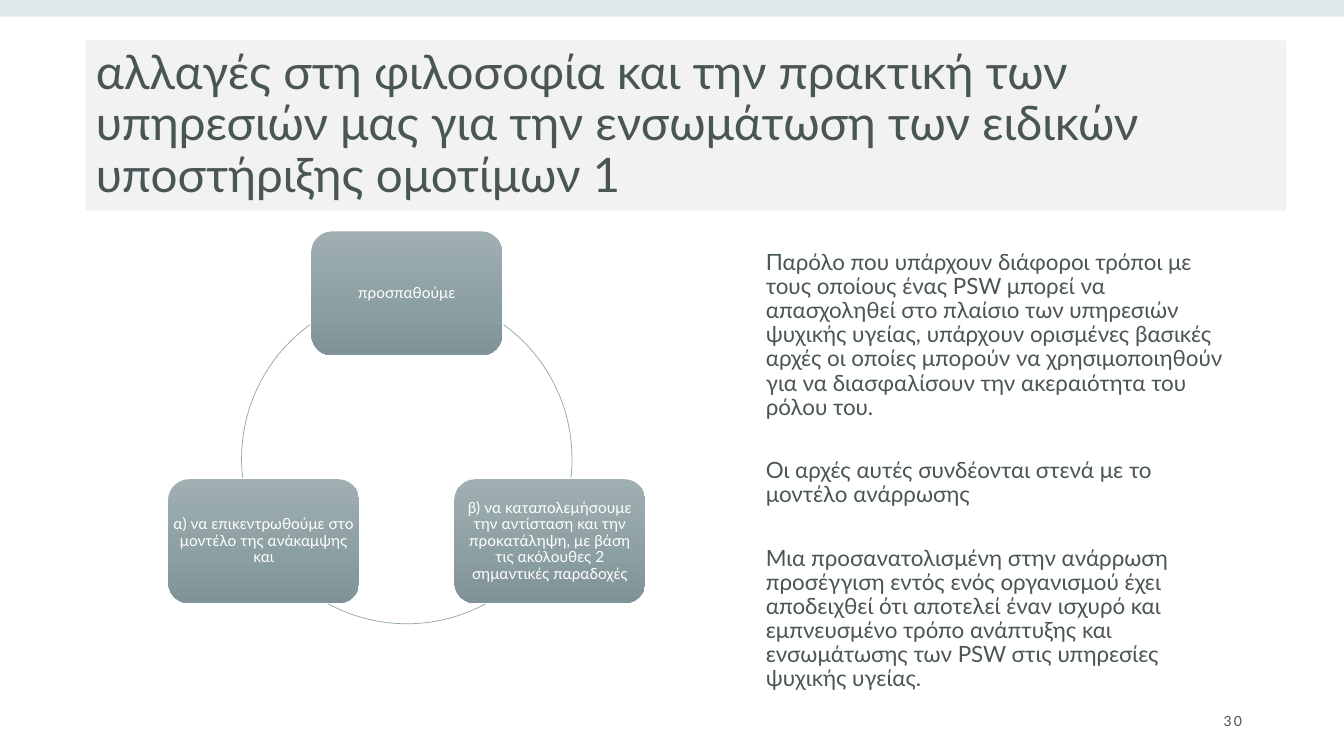
from dataclasses import dataclass
from math import cos, radians, sin

from lxml import etree
from pptx import Presentation
from pptx.dml.color import RGBColor
from pptx.enum.shapes import MSO_SHAPE
from pptx.enum.text import MSO_ANCHOR, MSO_AUTO_SIZE, PP_ALIGN
from pptx.oxml.ns import qn
from pptx.util import Pt

RECTANGLE, ROUNDED, ARC = MSO_SHAPE.RECTANGLE, MSO_SHAPE.ROUNDED_RECTANGLE, MSO_SHAPE.ARC
LEFT, CENTER, RIGHT = PP_ALIGN.LEFT, PP_ALIGN.CENTER, PP_ALIGN.RIGHT
TOP, MIDDLE = MSO_ANCHOR.TOP, MSO_ANCHOR.MIDDLE

FONT = "Lato"
COLORS = {
    "text": "4A5656",
    "label": "FFFFFF",
    "band": "BED6DA",
    "title_fill": "F2F2F2",
    "box_top": "9FAFB2",
    "box_bottom": "809497",
    "arc": "93A5A8",
}

PAGE_WIDTH, PAGE_HEIGHT = 960, 540
CYCLE_X, CYCLE_Y, CYCLE_RADIUS = 290.6, 327.6, 118
BOX_WIDTH, BOX_HEIGHT = 136.3, 88.6
LABEL_INSET = 3.3

TITLE = ("αλλαγές στη φιλοσοφία και την πρακτική των υπηρεσιών μας "
         "για την ενσωμάτωση των ειδικών υποστήριξης ομοτίμων 1")
BODY = [
    "Παρόλο που υπάρχουν διάφοροι τρόποι με τους οποίους ένας PSW μπορεί να "
    "απασχοληθεί στο πλαίσιο των υπηρεσιών ψυχικής υγείας, υπάρχουν ορισμένες "
    "βασικές αρχές οι οποίες μπορούν να χρησιμοποιηθούν για να διασφαλίσουν την "
    "ακεραιότητα του ρόλου του.",
    "Οι αρχές αυτές συνδέονται στενά με το μοντέλο ανάρρωσης",
    "Μια προσανατολισμένη στην ανάρρωση προσέγγιση εντός ενός οργανισμού έχει "
    "αποδειχθεί ότι αποτελεί έναν ισχυρό και εμπνευσμένο τρόπο ανάπτυξης και "
    "ενσωμάτωσης των PSW στις υπηρεσίες ψυχικής υγείας.",
]


@dataclass
class Step:
    """A box on the cycle and the arc that follows it, in clockwise degrees."""
    text: str
    angle: float
    arc_start: float
    arc_end: float


@dataclass
class TextStyle:
    size: float
    color: str = "text"
    align: PP_ALIGN = LEFT
    anchor: MSO_ANCHOR = MIDDLE
    line_spacing: float = 0.9
    before: float = 0
    after: float = 0


STEPS = [
    Step("προσπαθούμε", -90, 305.8, 6.6),
    Step("β) να καταπολεμήσουμε την αντίσταση και την προκατάληψη, "
         "με βάση τις ακόλουθες 2 σημαντικές παραδοχές", 30, 61.6, 118.4),
    Step("α) να επικεντρωθούμε στο μοντέλο της ανάκαμψης και", 150, 173.4, 234.2),
]
TITLE_STYLE = TextStyle(34)
BODY_STYLE = TextStyle(16, anchor=TOP, before=10, after=18)
LABEL_STYLE = TextStyle(11, "label", CENTER)
NUMBER_STYLE = TextStyle(10, align=RIGHT, line_spacing=1, after=6)


def rgb(name: str) -> RGBColor:
    return RGBColor.from_string(COLORS[name])


def write(frame, lines: list[str], style: TextStyle) -> None:
    frame.text = "\n".join(lines)
    frame.word_wrap = True
    frame.auto_size = MSO_AUTO_SIZE.NONE
    frame.vertical_anchor = style.anchor
    for para in frame.paragraphs:
        para.alignment = style.align
        para.line_spacing = style.line_spacing
        para.space_before, para.space_after = Pt(style.before), Pt(style.after)
        for span in para.runs:
            span.font.name = FONT
            span.font.size = Pt(style.size)
            span.font.color.rgb = rgb(style.color)


def add_text(page, left: float, top: float, width: float, height: float,
             lines: list[str], style: TextStyle):
    frame = page.shapes.add_textbox(Pt(left), Pt(top), Pt(width), Pt(height)).text_frame
    write(frame, lines, style)
    return frame


def add_band(page) -> None:
    band = page.shapes.add_shape(RECTANGLE, 0, 0, Pt(PAGE_WIDTH), Pt(12))
    band.shadow.inherit = False
    band.fill.solid()
    band.fill.fore_color.rgb = rgb("band")
    color = band.fill._xPr.find(qn("a:solidFill"))[0]
    etree.SubElement(color, qn("a:alpha")).set("val", "50000")
    band.line.fill.background()


def add_title(page) -> None:
    title = page.shapes.title
    title.left, title.top, title.width, title.height = Pt(61.2), Pt(28.8), Pt(857.5), Pt(121.5)
    title.fill.solid()
    title.fill.fore_color.rgb = rgb("title_fill")
    write(title.text_frame, [TITLE], TITLE_STYLE)


def add_step(page, step: Step) -> None:
    left = CYCLE_X + CYCLE_RADIUS * cos(radians(step.angle)) - BOX_WIDTH / 2
    top = CYCLE_Y + CYCLE_RADIUS * sin(radians(step.angle)) - BOX_HEIGHT / 2
    box = page.shapes.add_shape(ROUNDED, Pt(left), Pt(top), Pt(BOX_WIDTH), Pt(BOX_HEIGHT))
    box.shadow.inherit = False
    box.fill.gradient()
    box.fill.gradient_angle = 270
    for stop, name, position in zip(box.fill.gradient_stops, ("box_top", "box_bottom"), (0, 1)):
        stop.color.rgb = rgb(name)
        stop.position = position
    box.line.fill.background()

    label = add_text(page, left, top, BOX_WIDTH, BOX_HEIGHT, [step.text], LABEL_STYLE)
    label.margin_left = label.margin_right = Pt(LABEL_INSET)
    label.margin_top = label.margin_bottom = Pt(LABEL_INSET)


def add_arc(page, step: Step) -> None:
    arc = page.shapes.add_shape(ARC, Pt(CYCLE_X - CYCLE_RADIUS), Pt(CYCLE_Y - CYCLE_RADIUS),
                                Pt(2 * CYCLE_RADIUS), Pt(2 * CYCLE_RADIUS))
    arc.shadow.inherit = False
    # Angles are stored in 60000ths of a degree, adjustments in 100000ths.
    for index, angle in enumerate((step.arc_start, step.arc_end)):
        arc.adjustments[index] = angle * 0.6
    arc.fill.background()
    arc.line.color.rgb = rgb("arc")
    arc.line.width = Pt(0.5)


def add_page_number(page) -> None:
    frame = add_text(page, 678.2, 500.4, 216, 28.8, ["30"], NUMBER_STYLE)
    frame.paragraphs[0].runs[0]._r.get_or_add_rPr().set("spc", "150")


def main() -> None:
    deck = Presentation()
    deck.slide_width, deck.slide_height = Pt(PAGE_WIDTH), Pt(PAGE_HEIGHT)
    page = deck.slides.add_slide(deck.slide_layouts[5])
    add_band(page)
    add_title(page)
    add_text(page, 540, 175.7, 343.4, 364.3, BODY, BODY_STYLE)
    add_page_number(page)
    for step in STEPS:
        add_step(page, step)
        add_arc(page, step)
    deck.save("out.pptx")


if __name__ == "__main__":
    main()
